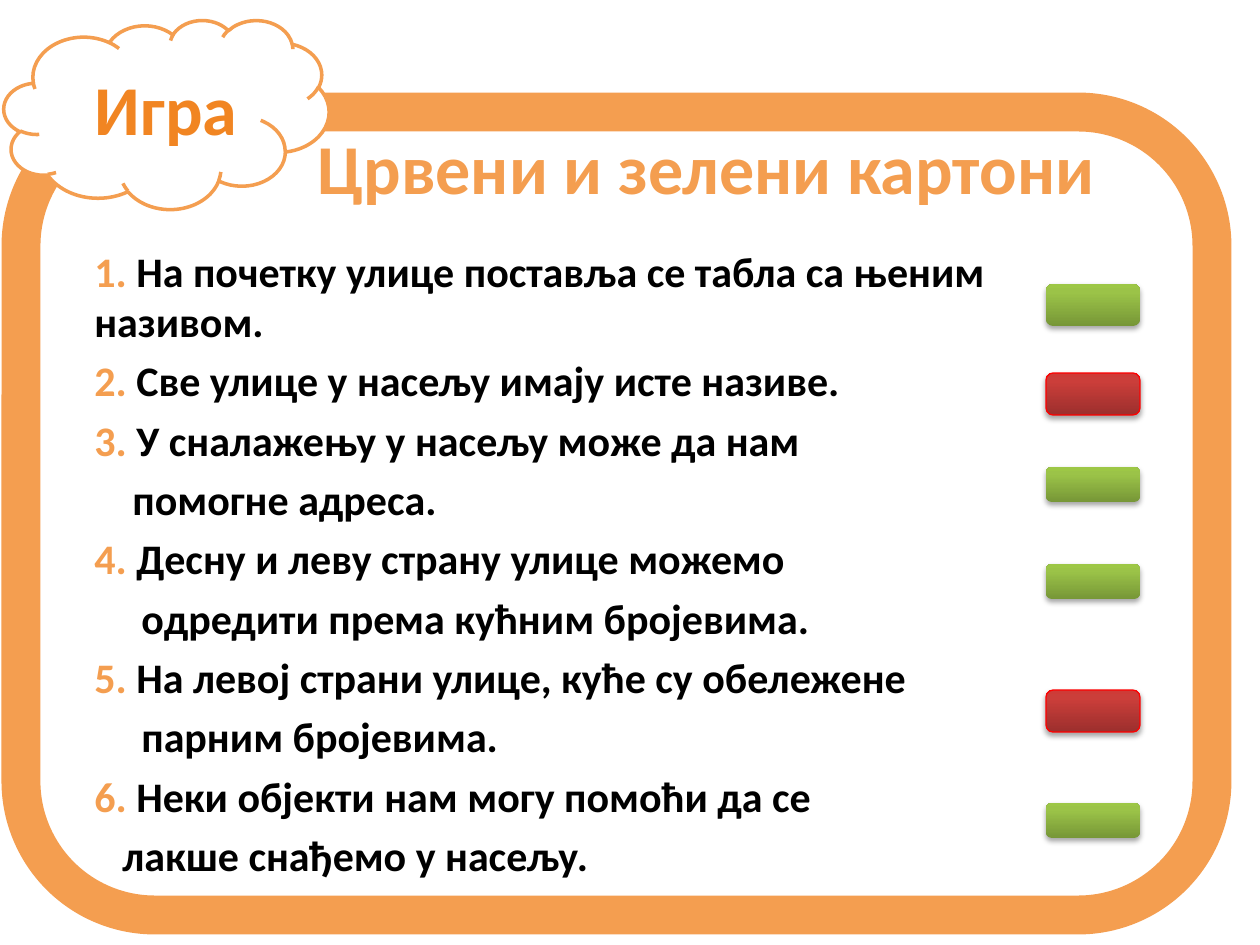
from copy import deepcopy

from lxml import etree
from pptx import Presentation
from pptx import util as u
from pptx.dml.color import RGBColor
from pptx.enum import shapes, text
from pptx.oxml.ns import qn

PX = 914400 / 126
ORANGE = RGBColor(0xF4, 0x9E, 0x50)
DEEP = RGBColor(0xF1, 0x85, 0x22)
WHITE = RGBColor(255, 255, 255)
BLACK = RGBColor(0, 0, 0)
EDGE = RGBColor(255, 0, 0)
REDS = [RGBColor(0x9C, 0x2F, 0x2D), RGBColor(0xCB, 0x3E, 0x3A), RGBColor(0xCE, 0x3B, 0x37)]
GREENS = [RGBColor(0x77, 0x97, 0x37), RGBColor(0x9B, 0xC3, 0x48), RGBColor(0x9D, 0xC7, 0x46)]


def scale(*sizes):
    """Turn px lengths into EMU."""
    return [u.Emu(round(size * PX)) for size in sizes]


def add_run(para, words, size, color):
    run = para.add_run()
    run.text = words
    run.font.name = "Calibri"
    run.font.size = u.Pt(size)
    run.font.bold = True
    run.font.color.rgb = color


prs = Presentation()
prs.slide_width, prs.slide_height = u.Inches(10), u.Inches(7.5)
slide = prs.slides.add_slide(prs.slide_layouts[5])
kinds = shapes.MSO_SHAPE

# Frame and cloud
for kind, box, width in [
    (kinds.ROUNDED_RECTANGLE, (21, 112, 1191, 803), 22.25),
    (kinds.CLOUD, (4, 20, 325, 189), 2),
]:
    shape = slide.shapes.add_shape(kind, *scale(*box))
    shape.shadow.inherit = False
    shape.fill.solid()
    shape.fill.fore_color.rgb = WHITE
    shape.line.color.rgb = ORANGE
    shape.line.width = u.Pt(width)

# Title, brought in front of the frame
title = slide.shapes.title
title.left, title.top, title.width, title.height = scale(305, 118, 853, 107)
title.element.getparent().append(title.element)
frame = title.text_frame
frame.auto_size = text.MSO_AUTO_SIZE.NONE
frame.vertical_anchor = text.MSO_ANCHOR.TOP
frame.paragraphs[0].alignment = text.PP_ALIGN.LEFT
add_run(frame.paragraphs[0], "Црвени и зелени картони", 40, ORANGE)

# Cloud label
frame = slide.shapes.add_textbox(*scale(82, 59, 168, 107)).text_frame
frame.word_wrap = False
frame.paragraphs[0].alignment = text.PP_ALIGN.CENTER
add_run(frame.paragraphs[0], "Игра", 40, DEEP)

# Statements: number, words, indent in px
lines = [
    ("1. ", "На почетку улице поставља се табла са њеним називом.", 0),
    ("2. ", "Све улице у насељу имају исте називе.", 0),
    ("3. ", "У сналажењу у насељу може да нам", 0),
    ("", "помогне адреса.", 38),
    ("4. ", "Десну и леву страну улице можемо", 0),
    ("", "одредити према кућним бројевима.", 47),
    ("5. ", "На левој страни улице, куће су обележене", 0),
    ("", "парним бројевима.", 47),
    ("6. ", "Неки објекти нам могу помоћи да се", 0),
    ("", "лакше снађемо у насељу.", 28),
]
frame = slide.shapes.add_textbox(*scale(82, 239, 998, 668)).text_frame
frame.word_wrap = True
for i, (number, words, indent) in enumerate(lines):
    para = frame.add_paragraph() if i else frame.paragraphs[0]
    para.space_after = u.Pt(5.1)
    if indent:
        para._p.get_or_add_pPr().set("marL", str(scale(indent)[0]))
    if number:
        add_run(para, number, 24, ORANGE)
    add_run(para, words, 24, BLACK)

# Answer cards: top, height, colours
for top, height, tones in [
    (284, 42, GREENS), (373, 42, REDS), (467, 35, GREENS),
    (564, 35, GREENS), (690, 42, REDS), (803, 35, GREENS),
]:
    card = slide.shapes.add_shape(kinds.ROUNDED_RECTANGLE, *scale(1046, top, 94, height))
    card.fill.gradient()
    card.fill.gradient_angle = 90
    stops = card.element.spPr.find(".//" + qn("a:gsLst"))
    stops.append(deepcopy(stops[-1]))
    for stop, place, tone in zip(card.fill.gradient_stops, (0, 0.8, 1), tones):
        stop.position = place
        stop.color.rgb = tone
    if tones is REDS:
        card.line.color.rgb = EDGE
        card.line.width = u.Pt(0.75)
    else:
        card.line.fill.background()
    card.shadow.inherit = False
    shade = etree.SubElement(
        card.element.spPr.find(qn("a:effectLst")), qn("a:outerShdw"),
        blurRad=str(u.Pt(3.1)), dist=str(u.Pt(1.8)), dir="5400000", rotWithShape="0")
    color = etree.SubElement(shade, qn("a:srgbClr"), val="000000")
    etree.SubElement(color, qn("a:alpha"), val="35000")

prs.save("out.pptx")
